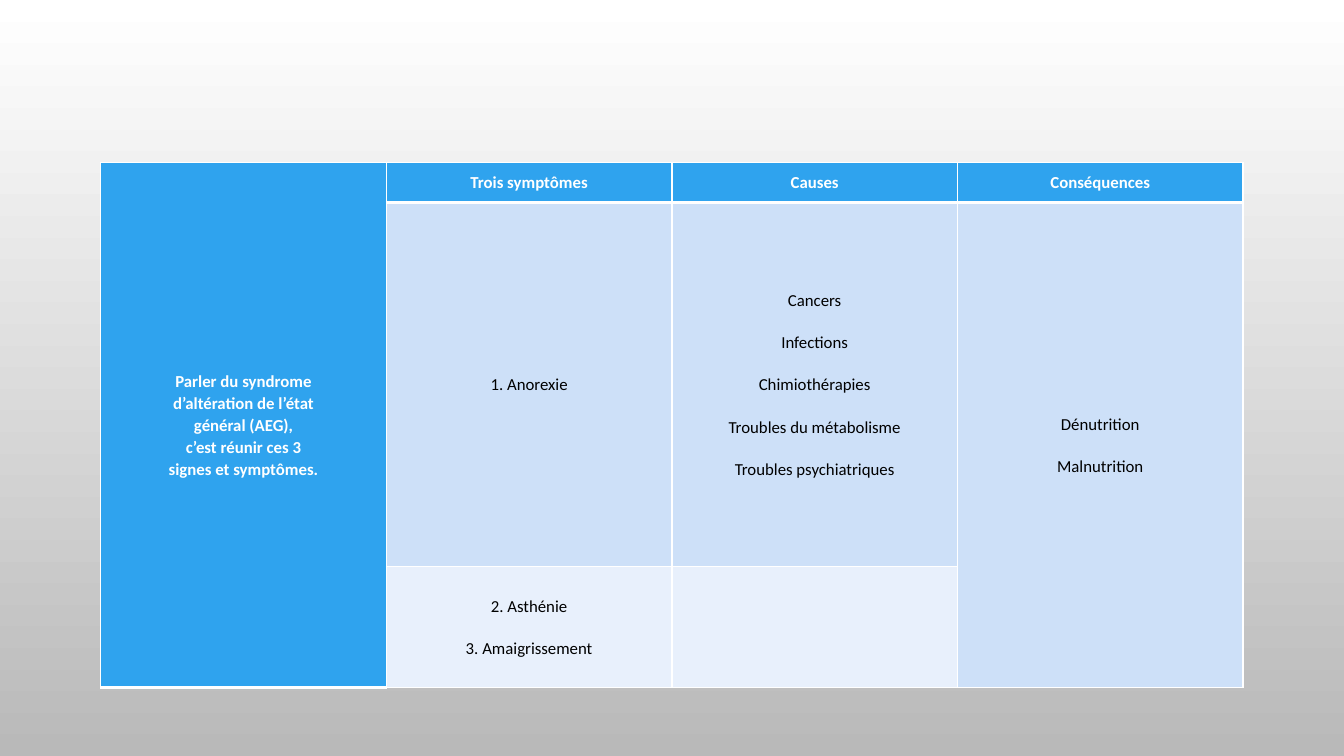
import dataclasses

import lxml.etree
import pptx
import pptx.dml.color
import pptx.enum.text
import pptx.oxml.ns
import pptx.table
import pptx.util


@dataclasses.dataclass(frozen=True)
class Theme:
    font: str = "Calibri"
    text_size: float = 12
    line_spacing: float = 1.07
    gap_between: float = 14.4
    gap_last: float = 8
    header: str = "2FA3EE"
    band_dark: str = "CDE0F8"
    band_light: str = "E8F0FC"
    white: str = "FFFFFF"
    black: str = "000000"
    backdrop_end: str = "B9B9B9"
    thin: float = 1
    thick: float = 3


@dataclasses.dataclass(frozen=True)
class Entry:
    row: int
    column: int
    paragraphs: tuple[str, ...]
    fill: str
    row_span: int = 1
    heading: bool = False


THEME = Theme()
SLIDE_WIDTH = pptx.util.Inches(13.33)
SLIDE_HEIGHT = pptx.util.Inches(7.5)
GRID_COLUMNS = 40
GRID_ROWS = 750
TABLE_LEFT, TABLE_TOP = 3, 161
COLUMN_SPANS = (8.5,) * 4
ROW_SPANS = (40, 361, 120)

DEFINITION = (
    "Parler du syndrome\nd’altération de l’état\ngénéral (AEG),\n"
    "c’est réunir ces 3\nsignes et symptômes."
)
HEADINGS = ("Trois symptômes", "Causes", "Conséquences")
ENTRIES = (
    Entry(0, 0, (DEFINITION,), THEME.header, row_span=3, heading=True),
    *(
        Entry(0, column, (heading,), THEME.header, heading=True)
        for column, heading in enumerate(HEADINGS, start=1)
    ),
    Entry(1, 1, ("1. Anorexie",), THEME.band_dark),
    Entry(
        1,
        2,
        (
            "Cancers",
            "Infections",
            "Chimiothérapies",
            "Troubles du métabolisme",
            "Troubles psychiatriques",
        ),
        THEME.band_dark,
    ),
    Entry(1, 3, ("Dénutrition", "Malnutrition"), THEME.band_dark, row_span=2),
    Entry(2, 1, ("2. Asthénie", "3. Amaigrissement"), THEME.band_light),
    Entry(2, 2, (), THEME.band_light),
)


def across(columns: float) -> int:
    return round(SLIDE_WIDTH * columns / GRID_COLUMNS)


def down(rows: float) -> int:
    return round(SLIDE_HEIGHT * rows / GRID_ROWS)


def rgb(value: str) -> pptx.dml.color.RGBColor:
    return pptx.dml.color.RGBColor.from_string(value)


def draw_borders(cell: pptx.table._Cell, entry: Entry) -> None:
    widths = {
        "a:lnL": THEME.thin,
        "a:lnR": THEME.thin,
        "a:lnT": THEME.thick if entry.row == 1 else THEME.thin,
        "a:lnB": THEME.thick if entry.heading else THEME.thin,
    }
    qn = pptx.oxml.ns.qn
    properties = cell._tc.get_or_add_tcPr()
    for side, width in widths.items():
        border = lxml.etree.SubElement(
            properties, qn(side), w=str(pptx.util.Pt(width))
        )
        solid = lxml.etree.SubElement(border, qn("a:solidFill"))
        lxml.etree.SubElement(solid, qn("a:srgbClr"), val=THEME.white)


def write_text(cell: pptx.table._Cell, entry: Entry) -> None:
    frame = cell.text_frame
    for index, text in enumerate(entry.paragraphs):
        paragraph = frame.add_paragraph() if index else frame.paragraphs[0]
        last = index == len(entry.paragraphs) - 1
        paragraph.alignment = pptx.enum.text.PP_ALIGN.CENTER
        paragraph.line_spacing = THEME.line_spacing
        paragraph.space_after = pptx.util.Pt(
            THEME.gap_last if last else THEME.gap_between
        )
        for number, line in enumerate(text.split("\n")):
            if number:
                paragraph.add_line_break()
            run = paragraph.add_run()
            run.text = line
            run.font.name = THEME.font
            run.font.size = pptx.util.Pt(THEME.text_size)
            run.font.bold = entry.heading
            run.font.color.rgb = rgb(THEME.white if entry.heading else THEME.black)


def draw_entry(table: pptx.table.Table, entry: Entry) -> None:
    cell = table.cell(entry.row, entry.column)
    if entry.row_span > 1:
        cell.merge(table.cell(entry.row + entry.row_span - 1, entry.column))
    cell.margin_left = cell.margin_right = 0
    cell.margin_top = cell.margin_bottom = 0
    cell.vertical_anchor = pptx.enum.text.MSO_ANCHOR.MIDDLE
    draw_borders(cell, entry)
    cell.fill.solid()
    cell.fill.fore_color.rgb = rgb(entry.fill)
    write_text(cell, entry)


def main() -> None:
    deck = pptx.Presentation()
    deck.slide_width = SLIDE_WIDTH
    deck.slide_height = SLIDE_HEIGHT
    slide = deck.slides.add_slide(deck.slide_layouts[6])

    backdrop = slide.background.fill
    backdrop.gradient()
    backdrop.gradient_angle = 270
    for stop, position, colour in zip(
        backdrop.gradient_stops, (0, 1), (THEME.white, THEME.backdrop_end)
    ):
        stop.position = position
        stop.color.rgb = rgb(colour)

    syndrome = slide.shapes.add_table(
        len(ROW_SPANS),
        len(COLUMN_SPANS),
        across(TABLE_LEFT),
        down(TABLE_TOP),
        across(sum(COLUMN_SPANS)),
        down(sum(ROW_SPANS)),
    ).table
    syndrome.first_row = False
    syndrome.horz_banding = False
    for column, span in zip(syndrome.columns, COLUMN_SPANS):
        column.width = across(span)
    for row, span in zip(syndrome.rows, ROW_SPANS):
        row.height = down(span)
    for entry in ENTRIES:
        draw_entry(syndrome, entry)

    deck.save("out.pptx")


if __name__ == "__main__":
    main()
